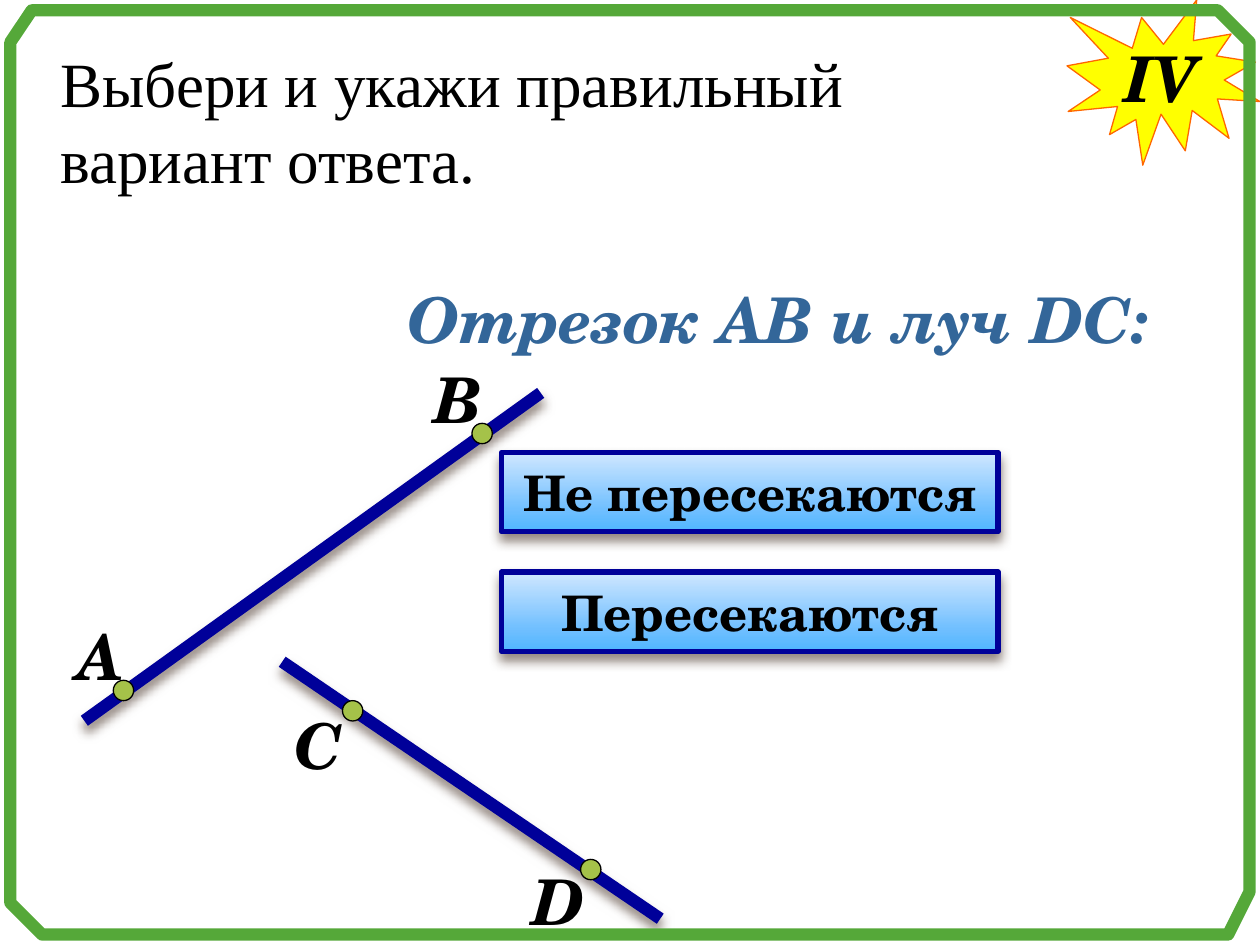
from copy import deepcopy
from dataclasses import dataclass

from lxml.etree import SubElement
from pptx import Presentation
from pptx.dml.color import RGBColor
from pptx.enum.shapes import MSO_CONNECTOR, MSO_SHAPE
from pptx.enum.text import MSO_ANCHOR, MSO_AUTO_SIZE, PP_ALIGN
from pptx.oxml.ns import qn
from pptx.util import Cm, Pt


@dataclass(frozen=True)
class Theme:
    """Colours, fonts and sizes of the lesson slide."""
    ink: str = "000000"
    heading: str = "336699"
    navy: str = "000099"
    point: str = "A5C249"
    frame: str = "55A839"
    star: str = "FFFF00"
    star_edge: str = "FF6600"
    shadow: str = "4E3B30"
    button: tuple = ((0, "D0E7FF"), (0.72, "70BFFF"), (1, "50B6FF"))
    display: str = "TeX Gyre Schola"
    body: str = "Times New Roman"
    large: int = 36
    medium: int = 28
    thick: float = 7
    border: float = 3
    thin: float = 0.75


@dataclass(frozen=True)
class Box:
    """A region of the slide in centimetres."""
    left: float
    top: float
    width: float
    height: float

    def within(self, left, top, width, height):
        """Return a box placed relative to this one."""
        return Box(self.left + left, self.top + top, width, height)

    def emu(self):
        """Return the four lengths for python-pptx."""
        return Cm(self.left), Cm(self.top), Cm(self.width), Cm(self.height)


THEME = Theme()


def rgb(value):
    """Turn a hex string into a colour."""
    return RGBColor.from_string(value)


def write(frame, text, size=THEME.large, font=THEME.display, color=THEME.ink,
          bold=True, italic=True, align=PP_ALIGN.CENTER, anchor=MSO_ANCHOR.TOP, wrap=False):
    """Set and format the single paragraph of a text frame."""
    frame.text = text
    frame.word_wrap = wrap
    frame.auto_size = MSO_AUTO_SIZE.NONE
    frame.vertical_anchor = anchor
    paragraph = frame.paragraphs[0]
    paragraph.alignment = align
    style = paragraph.runs[0].font
    style.name, style.size = font, Pt(size)
    style.bold, style.italic = bold, italic
    style.color.rgb = rgb(color)


def outline(shape, color, width):
    """Draw the line of a shape or connector."""
    shape.line.color.rgb = rgb(color)
    shape.line.width = Pt(width)


def add_shadow(shape):
    """Give a shape or connector a soft shadow straight below it."""
    effects = SubElement(shape._element.spPr, qn("a:effectLst"))
    shadow = SubElement(effects, qn("a:outerShdw"), blurRad=str(Pt(6)), dist=str(Pt(4)),
                        dir="5400000", algn="ctr", rotWithShape="0")
    color = SubElement(shadow, qn("a:srgbClr"), val=THEME.shadow)
    SubElement(color, qn("a:alpha"), val="60000")


def add_filled(slide, kind, box, fill, edge):
    """Add a flat preset shape with a thin edge."""
    shape = slide.shapes.add_shape(kind, *box.emu())
    shape.shadow.inherit = False
    shape.fill.solid()
    shape.fill.fore_color.rgb = rgb(fill)
    outline(shape, edge, THEME.thin)
    return shape


def add_question(slide, box):
    """Place the task in the title placeholder."""
    title = slide.shapes.title
    title.left, title.top, title.width, title.height = box.emu()
    write(title.text_frame, "Выбери и укажи правильный вариант ответа.", font=THEME.body,
          bold=False, italic=False, align=PP_ALIGN.LEFT, anchor=MSO_ANCHOR.MIDDLE, wrap=True)


def add_heading(slide, box):
    """Place the statement to complete."""
    heading = slide.shapes.add_textbox(*box.emu())
    write(heading.text_frame, "Отрезок АВ и луч DC:", color=THEME.heading)


def add_drawing(slide, box):
    """Draw the two lines with their marked and lettered points."""
    lines = [(0.4, 7.39, 9.6, 0.78), (4.39, 6.2, 12.01, 11.38)]
    points = [("А", (1.19, 6.78), (0, 5.18)), ("В", (8.42, 1.6), (7.21, 0)),
              ("С", (5.81, 7.19), (4.39, 6.98)), ("D", (10.61, 10.39), (9.19, 10.13))]
    diameter = 0.41
    for x1, y1, x2, y2 in lines:
        line = slide.shapes.add_connector(
            MSO_CONNECTOR.STRAIGHT, Cm(box.left + x1), Cm(box.top + y1),
            Cm(box.left + x2), Cm(box.top + y2))
        outline(line, THEME.navy, THEME.thick)
        add_shadow(line)
    for letter, (x, y), corner in points:
        dot = box.within(x - diameter / 2, y - diameter / 2, diameter, diameter)
        add_filled(slide, MSO_SHAPE.OVAL, dot, THEME.point, THEME.ink)
        label = slide.shapes.add_textbox(*box.within(*corner, 1.5, 1.8).emu())
        write(label.text_frame, letter, align=PP_ALIGN.LEFT)


def add_answers(slide, box):
    """Stack the answer buttons, evenly spaced, in the box."""
    answers = ["Не пересекаются", "Пересекаются"]
    height = 1.6
    step = (box.height - height) / (len(answers) - 1)
    for row, answer in enumerate(answers):
        button = slide.shapes.add_shape(
            MSO_SHAPE.RECTANGLE, *box.within(0, row * step, box.width, height).emu())
        button.fill.gradient()
        button.fill.gradient_angle = 270
        stops = button._element.spPr.find(".//" + qn("a:gsLst"))
        stops.append(deepcopy(stops[0]))
        for stop, (position, color) in zip(button.fill.gradient_stops, THEME.button):
            stop.position = position
            stop.color.rgb = rgb(color)
        outline(button, THEME.navy, THEME.border)
        add_shadow(button)
        write(button.text_frame, answer, size=THEME.medium, italic=False,
              anchor=MSO_ANCHOR.MIDDLE)


def add_star(slide, box):
    """Place the numbered star."""
    star = add_filled(slide, MSO_SHAPE.EXPLOSION1, box, THEME.star, THEME.star_edge)
    write(star.text_frame, "IV", anchor=MSO_ANCHOR.MIDDLE)


def add_frame(slide, box):
    """Outline the slide with cut corners."""
    w, h = box.width, box.height
    corners = [(0, 0.64), (0, h - 0.64), (0.64, h), (w - 0.43, h),
               (w, h - 0.86), (w, 0.64), (w - 0.64, 0), (0.43, 0)]
    path = [(Cm(box.left + x), Cm(box.top + y)) for x, y in corners]
    builder = slide.shapes.build_freeform(*path[0])
    builder.add_line_segments(path[1:], close=True)
    frame = builder.convert_to_shape()
    frame.shadow.inherit = False
    frame.fill.background()
    outline(frame, THEME.frame, THEME.thick)


def main():
    """Build the slide and save it."""
    deck = Presentation()
    deck.slide_width, deck.slide_height = Cm(25.4), Cm(19.05)
    slide = deck.slides.add_slide(deck.slide_layouts[5])
    add_question(slide, Box(0.97, 0.76, 20.55, 3.33))
    add_heading(slide, Box(6.5, 5.54, 18.39, 1.42))
    add_drawing(slide, Box(1.3, 7.14, 12.01, 11.93))
    add_answers(slide, Box(10.11, 9.12, 10.01, 4.01))
    add_star(slide, Box(21.51, 0, 3.89, 3.33))
    add_frame(slide, Box(0.21, 0.21, 24.98, 18.63))
    deck.save("out.pptx")


if __name__ == "__main__":
    main()
